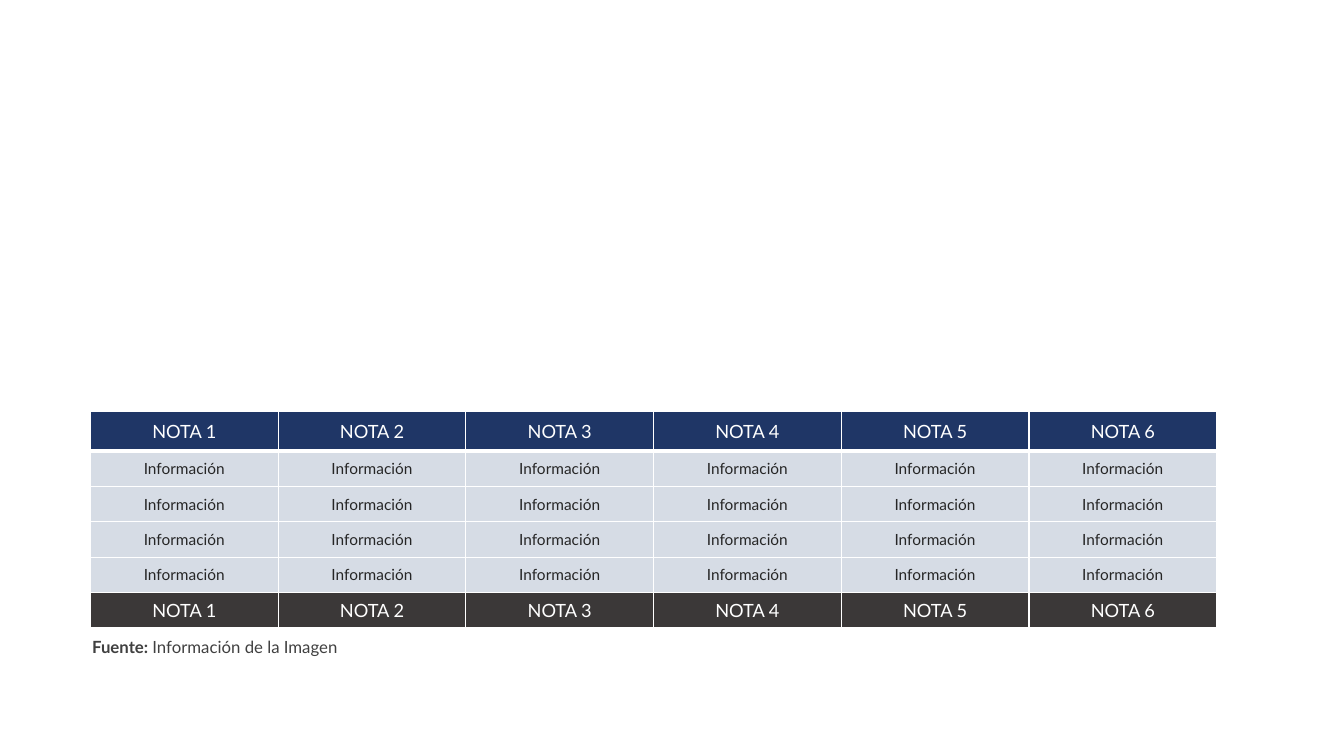
from lxml.etree import SubElement
from pptx import Presentation
from pptx.dml.color import RGBColor
from pptx.enum.text import MSO_ANCHOR, PP_ALIGN
from pptx.oxml.ns import qn
from pptx.util import Cm, Pt

COLORS = {
    "navy": "1F3666",
    "pale": "D6DCE5",
    "charcoal": "3B3838",
    "white": "FFFFFF",
    "ink": "262626",
    "gray": "404040",
}
COLUMN_COUNT = 6
BODY_ROW_COUNT = 4


class SlideBuilder:
    def __init__(self, page, font="Lato"):
        self.page = page
        self.font = font

    def color(self, name):
        return RGBColor.from_string(COLORS[name])

    def add_span(self, para, text, size, color, bold=False):
        span = para.add_run()
        span.text = text
        span.font.name = self.font
        span.font.size = Pt(size)
        span.font.bold = bold
        span.font.color.rgb = self.color(color)

    def add_borders(self, cell, widths):
        properties = cell._tc.get_or_add_tcPr()
        for side, width in widths.items():
            line = SubElement(properties, qn(f"a:ln{side}"), w=str(Pt(width)))
            fill = SubElement(line, qn("a:solidFill"))
            SubElement(fill, qn("a:srgbClr"), val=COLORS["white"])

    def fill_cell(self, cell, text, style, top, bottom):
        fill, color, size = style
        self.add_borders(cell, {"L": 1, "R": 1, "T": top, "B": bottom})
        cell.fill.solid()
        cell.fill.fore_color.rgb = self.color(fill)
        cell.vertical_anchor = MSO_ANCHOR.MIDDLE
        para = cell.text_frame.paragraphs[0]
        para.alignment = PP_ALIGN.CENTER
        self.add_span(para, text, size, color)

    def add_table(self, left, top, column_width, row_heights, rows):
        """Each row is a pair: its texts and its (fill, text colour, size)."""
        column_count = len(rows[0][0])
        table = self.page.shapes.add_table(
            len(rows), column_count, Cm(left), Cm(top),
            Cm(column_width * column_count), Cm(sum(row_heights)),
        ).table
        for column in table.columns:
            column.width = Cm(column_width)
        for index, (texts, style) in enumerate(rows):
            table.rows[index].height = Cm(row_heights[index])
            # A thick rule separates the header from the body
            top_rule = 3 if index == 1 else 1
            bottom_rule = 3 if index == 0 else 1
            for cell, text in zip(table.rows[index].cells, texts):
                self.fill_cell(cell, text, style, top_rule, bottom_rule)

    def add_text(self, left, top, width, height, spans, size, color):
        box = self.page.shapes.add_textbox(
            Cm(left), Cm(top), Cm(width), Cm(height))
        frame = box.text_frame
        frame.word_wrap = True
        frame.vertical_anchor = MSO_ANCHOR.MIDDLE
        frame.margin_left = frame.margin_right = Cm(0.33)
        frame.margin_top = frame.margin_bottom = Cm(0.13)
        para = frame.paragraphs[0]
        para.alignment = PP_ALIGN.RIGHT
        para.line_spacing = 0.9
        for text, bold in spans:
            self.add_span(para, text, size, color, bold)


def main():
    deck = Presentation()
    deck.slide_width = Cm(33.87)
    deck.slide_height = Cm(19.05)
    page = deck.slides.add_slide(deck.slide_layouts[6])
    builder = SlideBuilder(page)

    # Notes table: header, body and footer rows
    notes = [f"NOTA {number}" for number in range(1, COLUMN_COUNT + 1)]
    details = ["Información"] * COLUMN_COUNT
    header = (notes, ("navy", "white", 13))
    body = (details, ("pale", "ink", 11))
    footer = (notes, ("charcoal", "white", 13))
    rows = [header] + [body] * BODY_ROW_COUNT + [footer]
    row_heights = [1.0] + [0.89] * (len(rows) - 1)
    builder.add_table(2.28, 10.37, 4.73, row_heights, rows)

    # Source line
    source = [("Fuente: ", True), ("Información de la Imagen", False)]
    builder.add_text(-2.41, 16, 11.25, 0.64, source, 12, "gray")

    deck.save("out.pptx")


if __name__ == "__main__":
    main()
